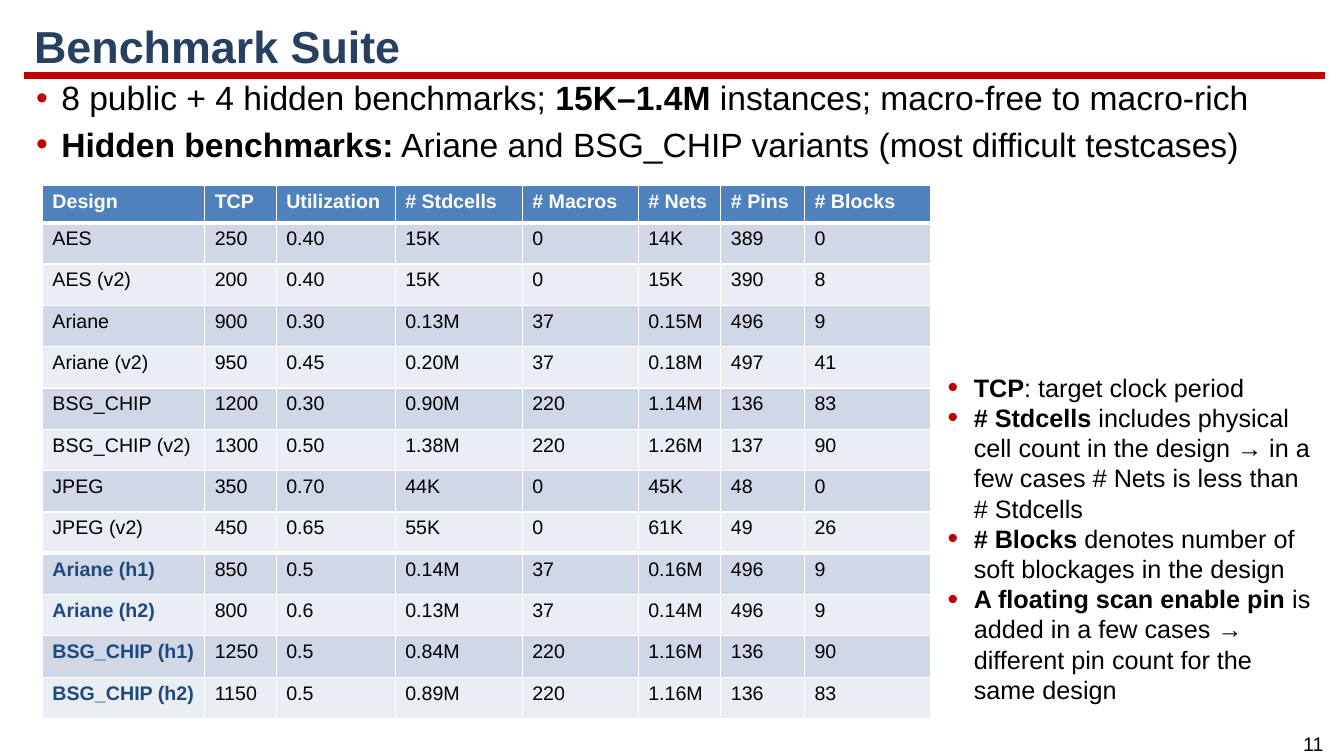
from lxml.etree import SubElement
from pptx import Presentation
from pptx.dml.color import RGBColor
from pptx.enum.shapes import MSO_CONNECTOR
from pptx.enum.text import MSO_ANCHOR, PP_ALIGN
from pptx.oxml.ns import qn
from pptx.util import Inches, Pt

COLORS = {
    "title": "254061", "accent": "C00000", "text": "000000", "white": "FFFFFF",
    "header": "4F81BD", "band_dark": "D0D8E8", "band_light": "E9EDF4",
    "hidden": "1F497D",
}

OVERVIEW = [
    [("8 public + 4 hidden benchmarks; ", False), ("15K–1.4M", True),
     (" instances; macro-free to macro-rich", False)],
    [("Hidden benchmarks:", True),
     (" Ariane and BSG_CHIP variants (most difficult testcases)", False)],
]
NOTES = [
    [("TCP", True), (": target clock period", False)],
    [("# Stdcells ", True),
     ("includes physical cell count in the design → in a few cases "
      "# Nets is less than # Stdcells", False)],
    [("# Blocks ", True),
     ("denotes number of soft blockages in the design", False)],
    [("A floating scan enable pin ", True),
     ("is added in a few cases → different pin count for the same design", False)],
]
BENCHMARKS = [
    ("Design", "TCP", "Utilization", "# Stdcells", "# Macros", "# Nets", "# Pins", "# Blocks"),
    ("AES", "250", "0.40", "15K", "0", "14K", "389", "0"),
    ("AES (v2)", "200", "0.40", "15K", "0", "15K", "390", "8"),
    ("Ariane", "900", "0.30", "0.13M", "37", "0.15M", "496", "9"),
    ("Ariane (v2)", "950", "0.45", "0.20M", "37", "0.18M", "497", "41"),
    ("BSG_CHIP", "1200", "0.30", "0.90M", "220", "1.14M", "136", "83"),
    ("BSG_CHIP (v2)", "1300", "0.50", "1.38M", "220", "1.26M", "137", "90"),
    ("JPEG", "350", "0.70", "44K", "0", "45K", "48", "0"),
    ("JPEG (v2)", "450", "0.65", "55K", "0", "61K", "49", "26"),
    ("Ariane (h1)", "850", "0.5", "0.14M", "37", "0.16M", "496", "9"),
    ("Ariane (h2)", "800", "0.6", "0.13M", "37", "0.14M", "496", "9"),
    ("BSG_CHIP (h1)", "1250", "0.5", "0.84M", "220", "1.16M", "136", "90"),
    ("BSG_CHIP (h2)", "1150", "0.5", "0.89M", "220", "1.16M", "136", "83"),
]
COLUMN_WIDTHS = [1.61, 0.71, 1.18, 1.26, 1.15, 0.82, 0.83, 1.25]
FIRST_HIDDEN_ROW = 9
THICK_RULES = (1, FIRST_HIDDEN_ROW)  # rows with a heavy line above


def set_font(paragraph, size, color, bold=None):
    paragraph.font.name = "Arial"
    paragraph.font.size = Pt(size)
    paragraph.font.bold = bold
    paragraph.font.color.rgb = RGBColor.from_string(COLORS[color])


def add_bullets(frame, items, size, hanging, bullet_percent):
    """Fill a text frame with bulleted paragraphs of (text, bold) runs."""
    frame.word_wrap = True
    for index, item in enumerate(items):
        paragraph = frame.paragraphs[0] if index == 0 else frame.add_paragraph()
        properties = paragraph._p.get_or_add_pPr()
        properties.set("marL", str(Inches(0.26)))
        properties.set("indent", str(-Inches(hanging)))
        bullet_color = SubElement(properties, qn("a:buClr"))
        SubElement(bullet_color, qn("a:srgbClr"), val=COLORS["accent"])
        SubElement(properties, qn("a:buSzPct"), val=str(bullet_percent * 1000))
        SubElement(properties, qn("a:buFont"), typeface="Arial")
        SubElement(properties, qn("a:buChar"), char="•")
        set_font(paragraph, size, "text")
        for text, bold in item:
            run = paragraph.add_run()
            run.text = text
            run.font.bold = bold


prs = Presentation()
prs.slide_width = Inches(13.33)
prs.slide_height = Inches(7.5)
slide = prs.slides.add_slide(prs.slide_layouts[6])

# Title, rule and page number
title_rule = slide.shapes.add_connector(
    MSO_CONNECTOR.STRAIGHT, Inches(0.24), Inches(0.75), Inches(13.14), Inches(0.75))
title_rule.line.color.rgb = RGBColor.from_string(COLORS["accent"])
title_rule.line.width = Pt(4.5)
SubElement(title_rule._element.spPr, qn("a:effectLst"))

page_number = slide.shapes.add_textbox(
    Inches(12.73), Inches(7.21), Inches(0.59), Inches(0.34)).text_frame
page_number.word_wrap = True
page_number.text = "11"
page_number.paragraphs[0].alignment = PP_ALIGN.CENTER
set_font(page_number.paragraphs[0], 14, "text")

title = slide.shapes.add_textbox(
    Inches(0.24), Inches(0.16), Inches(12.91), Inches(0.65)).text_frame
title.word_wrap = True
title.vertical_anchor = MSO_ANCHOR.MIDDLE
title.text = "Benchmark Suite"
title.paragraphs[0].line_spacing = 0.9
set_font(title.paragraphs[0], 32, "title", True)

# Overview
overview = slide.shapes.add_textbox(
    Inches(0.25), Inches(0.78), Inches(12.89), Inches(0.98)).text_frame
add_bullets(overview, OVERVIEW, 24, 0.25, 100)
for paragraph in overview.paragraphs:
    paragraph.line_spacing = 0.85
overview.paragraphs[1].space_before = Pt(8.4)

# Benchmark table
table = slide.shapes.add_table(
    len(BENCHMARKS), len(COLUMN_WIDTHS),
    Inches(0.42), Inches(1.84), Inches(8.8), Inches(5.24)).table
for column, width in zip(table.columns, COLUMN_WIDTHS):
    column.width = Inches(width)
for r, benchmark in enumerate(BENCHMARKS):
    table.rows[r].height = Inches(0.41 if r else 0.37)
    band = "header" if r == 0 else "band_dark" if r % 2 else "band_light"
    top = 3 if r in THICK_RULES else 1
    bottom = 3 if r + 1 in THICK_RULES else 1
    for c, value in enumerate(benchmark):
        cell = table.cell(r, c)
        cell.text = value
        hidden_name = c == 0 and r >= FIRST_HIDDEN_ROW
        color = "white" if r == 0 else "hidden" if hidden_name else "text"
        set_font(cell.text_frame.paragraphs[0], 14, color, r == 0 or hidden_name)
        cell_properties = cell._tc.get_or_add_tcPr()
        for side, points in (("L", 1), ("R", 1), ("T", top), ("B", bottom)):
            border = SubElement(cell_properties, qn(f"a:ln{side}"), w=str(Pt(points)))
            border_fill = SubElement(border, qn("a:solidFill"))
            SubElement(border_fill, qn("a:srgbClr"), val=COLORS["white"])
        cell.fill.solid()
        cell.fill.fore_color.rgb = RGBColor.from_string(COLORS[band])

# Notes beside the table
notes = slide.shapes.add_textbox(
    Inches(9.3), Inches(3.64), Inches(3.85), Inches(3.43)).text_frame
add_bullets(notes, NOTES, 18, 0.26, 120)

prs.save("out.pptx")
